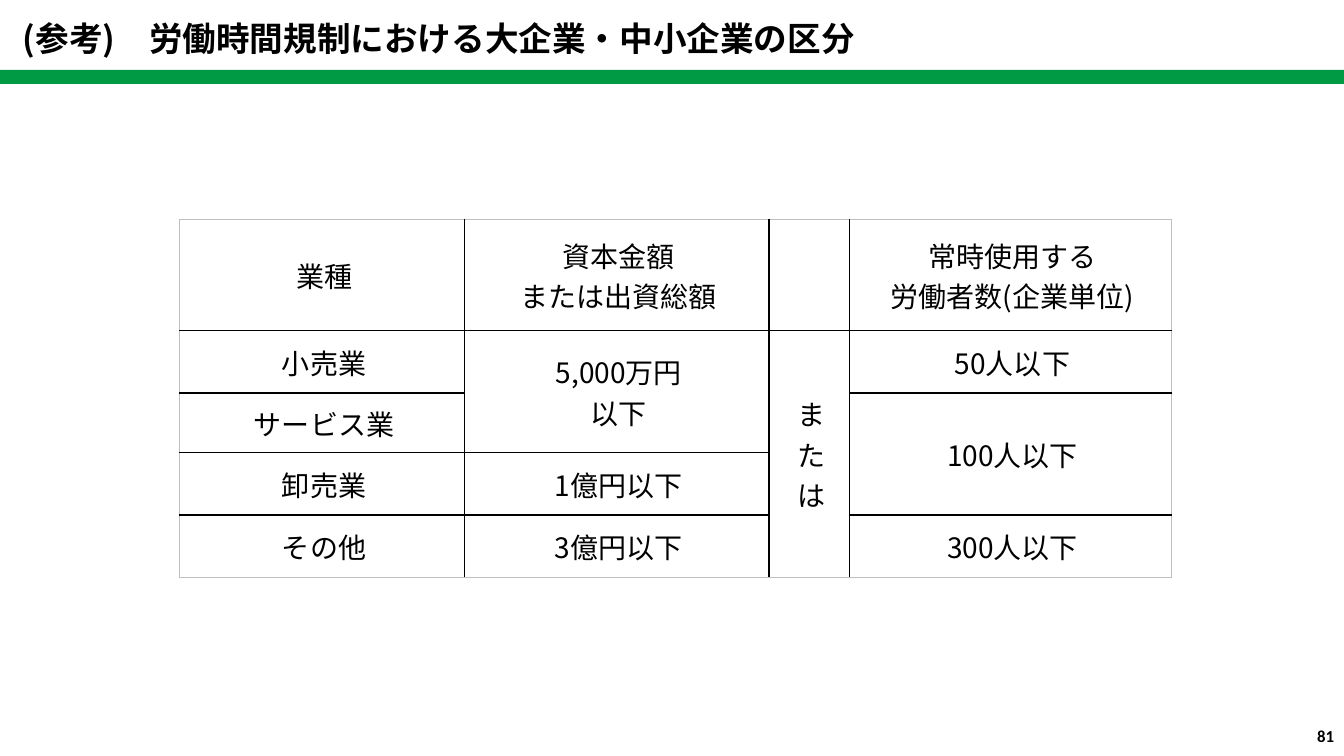
"""Build the slide on company size classes under working-hour rules."""
from pptx import Presentation, util as u
from pptx.dml.color import RGBColor
from pptx.enum import shapes, text
from pptx.oxml import parse_xml
from pptx.oxml.ns import nsdecls

BLACK = RGBColor(0x00, 0x00, 0x00)
WHITE = RGBColor(0xFF, 0xFF, 0xFF)
GREEN = RGBColor(0x00, 0x99, 0x44)
GREY = RGBColor(0xBF, 0xBF, 0xBF)

COLUMNS = (203.76, 217.44, 57.6, 229.68)
ROWS = (79.2, 44.64, 42.48, 44.64, 44.64)
CELLS = {
    (0, 0): ["業種"],
    (0, 1): ["資本金額", "または出資総額"],
    (0, 3): ["常時使用する", "労働者数(企業単位)"],
    (1, 0): ["小売業"],
    (1, 1): ["5,000万円", "以下"],
    (1, 2): ["ま", "た", "は"],
    (1, 3): ["50人以下"],
    (2, 0): ["サービス業"],
    (2, 3): ["100人以下"],
    (3, 0): ["卸売業"],
    (3, 1): ["1億円以下"],
    (4, 0): ["その他"],
    (4, 1): ["3億円以下"],
    (4, 3): ["300人以下"],
}
MERGES = [((1, 1), (2, 1)), ((1, 2), (4, 2)), ((2, 3), (3, 3))]


class Painter:
    def __init__(self, page, font):
        self.page = page
        self.font = font

    def add_lines(self, frame, lines, size, align, bold=False, font=None):
        for index, line in enumerate(lines):
            para = frame.add_paragraph() if index else frame.paragraphs[0]
            para.alignment = align
            span = para.add_run()
            span.text = line
            span.font.size = u.Pt(size)
            span.font.bold = bold
            span.font.color.rgb = BLACK
            span.font.name = font or self.font
            east_asian = f'<a:ea {nsdecls("a")} typeface="{self.font}"/>'
            span.font._element.append(parse_xml(east_asian))

    def label(self, bounds, line, size, align, anchor, font=None):
        box = self.page.shapes.add_textbox(*map(u.Pt, bounds))
        box.text_frame.word_wrap = True
        box.text_frame.vertical_anchor = anchor
        self.add_lines(box.text_frame, [line], size, align, True, font)

    def bar(self, bounds, color):
        kind = shapes.MSO_SHAPE.RECTANGLE
        box = self.page.shapes.add_shape(kind, *map(u.Pt, bounds))
        box.shadow.inherit = False
        box.fill.solid()
        box.fill.fore_color.rgb = color
        box.line.fill.background()

    def borders(self, cell, outer):
        properties = cell._tc.get_or_add_tcPr()
        for index, side in enumerate("LRTB"):
            color, width = (GREY, 0.5) if side in outer else (BLACK, 1)
            properties.insert(index, parse_xml(
                f'<a:ln{side} {nsdecls("a")} w="{u.Pt(width)}"><a:solidFill>'
                f'<a:srgbClr val="{color}"/></a:solidFill></a:ln{side}>'))

    def table(self, left, top, columns, rows, cells, merges):
        bounds = (left, top, sum(columns), sum(rows))
        grid = self.page.shapes.add_table(
            len(rows), len(columns), *map(u.Pt, bounds)).table
        grid.first_row = grid.horz_banding = False
        for column, width in zip(grid.columns, columns):
            column.width = u.Pt(width)
        for row, height in zip(grid.rows, rows):
            row.height = u.Pt(height)
        for first, last in merges:
            grid.cell(*first).merge(grid.cell(*last))
        for r in range(len(rows)):
            for c in range(len(columns)):
                cell = grid.cell(r, c)
                cell.fill.solid()
                cell.fill.fore_color.rgb = WHITE
                cell.vertical_anchor = text.MSO_ANCHOR.MIDDLE
                cell.margin_left, cell.margin_right = u.Pt(5.76), u.Pt(2.88)
                cell.margin_top = cell.margin_bottom = u.Pt(3.6 if c else 2.88)
                bottom = r + (cell.span_height if cell.is_merge_origin else 1)
                edges = {"L": c == 0, "R": c == len(columns) - 1,
                         "T": r == 0, "B": bottom == len(rows)}
                self.borders(cell, [side for side in edges if edges[side]])
                self.add_lines(cell.text_frame, cells.get((r, c), []), 20,
                               text.PP_ALIGN.CENTER)


def main():
    deck = Presentation()
    deck.slide_width, deck.slide_height = u.Pt(960), u.Pt(540)
    page = deck.slides.add_slide(deck.slide_layouts[6])
    painter = Painter(page, "Noto Sans CJK JP")
    painter.table(128.16, 156.96, COLUMNS, ROWS, CELLS, MERGES)
    painter.bar((0, 49.9, 960, 10), GREEN)
    painter.label((9.36, 9.36, 850, 36), "(参考)　労働時間規制における大企業・中小企業の区分",
                  24, text.PP_ALIGN.LEFT, text.MSO_ANCHOR.TOP)
    painter.label((736, 511.2, 224, 28.8), "81", 12,
                  text.PP_ALIGN.RIGHT, text.MSO_ANCHOR.MIDDLE, "Calibri")
    deck.save("out.pptx")


if __name__ == "__main__":
    main()
